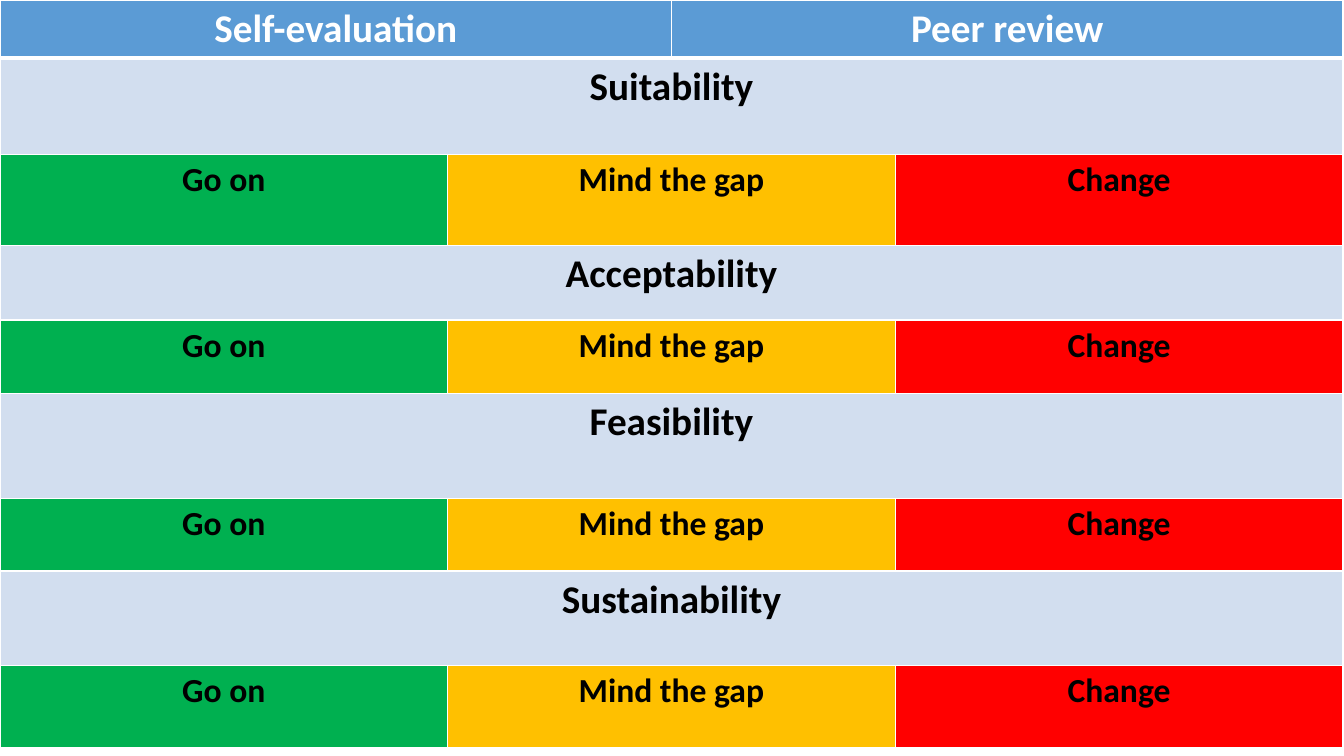
from lxml import etree
from pptx import Presentation
from pptx.dml.color import RGBColor
from pptx.enum.text import PP_ALIGN
from pptx.oxml.ns import qn
from pptx.util import Inches, Pt

CENTER = PP_ALIGN.CENTER
BLANK_LAYOUT = 6

# Content
HEADINGS = ["Self-evaluation", "Peer review"]
CRITERIA = ["Suitability", "Acceptability", "Feasibility", "Sustainability"]
RATINGS = [("Go on", "green"), ("Mind the gap", "amber"), ("Change", "red")]

# Format
COLORS = {
    "white": "FFFFFF", "black": "000000", "blue": "5B9BD5", "pale": "D2DEEF",
    "green": "00B050", "amber": "FFC000", "red": "FF0000",
}
COLUMN_WIDTHS = [4.44, 2.22, 2.22, 4.44]
ROW_HEIGHTS = [0.57, 0.96, 0.9, 0.74, 0.73, 1.04, 0.72, 0.94, 0.81]
HEADING_SPANS = [(0, 1), (2, 3)]
CRITERION_SPAN = (0, 3)
RATING_SPANS = [(0, 0), (1, 2), (3, 3)]
LARGE, SMALL = 28, 24
THIN, THICK = 1, 3


def draw_borders(cell, top, bottom):
    """Give a cell white borders with the given top and bottom widths."""
    properties = cell._tc.get_or_add_tcPr()
    widths = {"a:lnL": THIN, "a:lnR": THIN, "a:lnT": top, "a:lnB": bottom}
    for side, width in widths.items():
        border = etree.SubElement(properties, qn(side), w=str(Pt(width)))
        fill = etree.SubElement(border, qn("a:solidFill"))
        etree.SubElement(fill, qn("a:srgbClr"), val=COLORS["white"])


def fill_span(table, row, span, text, fill, size, color="black"):
    """Merge a span of columns in a row and write its label."""
    first, last = span
    cell = table.cell(row, first)
    if last > first:
        cell.merge(table.cell(row, last))
    for column in range(first, last + 1):
        background = table.cell(row, column).fill
        background.solid()
        background.fore_color.rgb = RGBColor.from_string(COLORS[fill])
    paragraph = cell.text_frame.paragraphs[0]
    paragraph.alignment = CENTER
    label = paragraph.add_run()
    label.text = text
    for name, value in {"name": "Calibri", "size": Pt(size), "bold": True}.items():
        setattr(label.font, name, value)
    label.font.color.rgb = RGBColor.from_string(COLORS[color])


def main():
    prs = Presentation()
    prs.slide_width, prs.slide_height = Inches(13.33), Inches(7.5)
    slide = prs.slides.add_slide(prs.slide_layouts[BLANK_LAYOUT])

    # Table grid
    table = slide.shapes.add_table(
        len(ROW_HEIGHTS), len(COLUMN_WIDTHS), 0, 0,
        Inches(sum(COLUMN_WIDTHS)), Inches(sum(ROW_HEIGHTS))).table
    table.horz_banding = False
    for column, width in zip(table.columns, COLUMN_WIDTHS):
        column.width = Inches(width)
    for index, (row, height) in enumerate(zip(table.rows, ROW_HEIGHTS)):
        row.height = Inches(height)
        for cell in row.cells:
            draw_borders(cell, THICK if index == 1 else THIN,
                         THICK if index == 0 else THIN)

    # Heading row
    for span, heading in zip(HEADING_SPANS, HEADINGS):
        fill_span(table, 0, span, heading, "blue", LARGE, "white")

    # Each criterion with its ratings below
    for index, criterion in enumerate(CRITERIA):
        criterion_row = 1 + 2 * index
        fill_span(table, criterion_row, CRITERION_SPAN, criterion, "pale", LARGE)
        for span, (rating, fill) in zip(RATING_SPANS, RATINGS):
            fill_span(table, criterion_row + 1, span, rating, fill, SMALL)

    prs.save("out.pptx")


if __name__ == "__main__":
    main()
